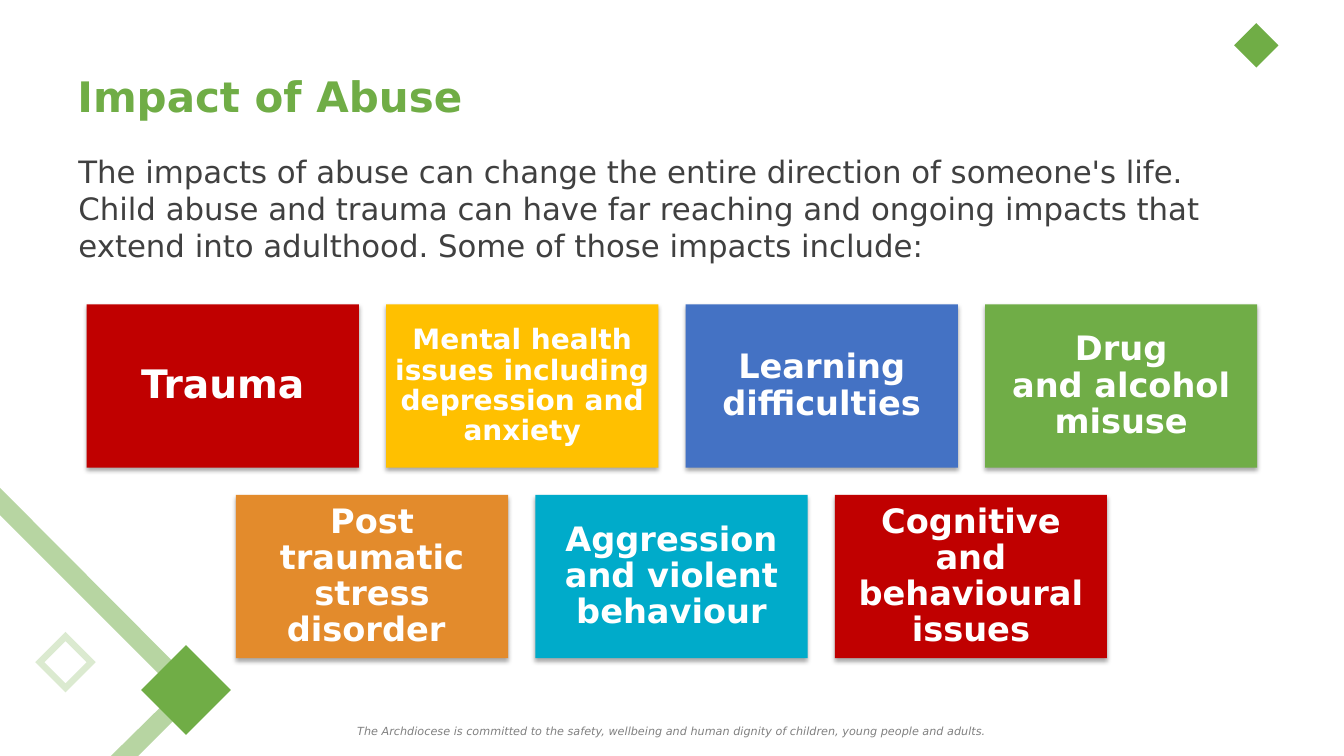
import pptx
import pptx.dml.color
import pptx.enum.shapes
import pptx.enum.text
import pptx.oxml
import pptx.oxml.ns
import pptx.util

EMU_PER_PX = 9144  # 100 px to the inch
PAGE_WIDTH, PAGE_HEIGHT = 1333, 750
COLORS = {
    "leaf": "70AD46", "green": "70AD47", "red": "C00000", "yellow": "FFC000",
    "blue": "4472C4", "orange": "E38B2C", "teal": "00ABCA",
    "text": "404040", "footer": "808080", "white": "FFFFFF",
}
TILE_WIDTH, TILE_HEIGHT, TILE_GAP, TILE_TOP = 270, 162, 27, 302
TILE_ROWS = [
    [("Trauma", "red", 28, 12),
     ("Mental health issues including depression and anxiety", "yellow", 20, 8),
     ("Learning difficulties", "blue", 24, 10),
     ("Drug\nand alcohol misuse", "green", 24, 10)],
    [("Post traumatic stress disorder ", "orange", 24, 10),
     ("Aggression\nand violent behaviour", "teal", 24, 10),
     ("Cognitive\nand behavioural issues", "red", 24, 10)],
]
SHADOW = (
    '<a:effectLst xmlns:a="http://schemas.openxmlformats.org/drawingml/2006/main">'
    '<a:outerShdw blurRad="40000" dist="23000" dir="5400000" rotWithShape="0">'
    '<a:srgbClr val="000000"><a:alpha val="35000"/></a:srgbClr>'
    '</a:outerShdw></a:effectLst>'
)
ALIGN = pptx.enum.text.PP_ALIGN
ANCHOR = pptx.enum.text.MSO_ANCHOR
PRESET = pptx.enum.shapes.MSO_SHAPE


def px(*lengths):
    return [pptx.util.Emu(length * EMU_PER_PX) for length in lengths]


class Slide:
    font = "DejaVu Sans"

    def __init__(self, deck):
        self.shapes = deck.slides.add_slide(deck.slide_layouts[6]).shapes

    def paint(self, shape, color, opacity=100):
        shape.shadow.inherit = False
        shape.line.fill.background()
        shape.fill.solid()
        shape.fill.fore_color.rgb = pptx.dml.color.RGBColor.from_string(COLORS[color])
        if opacity < 100:
            fill = shape._element.spPr.find(pptx.oxml.ns.qn("a:solidFill"))
            alpha = fill[0].makeelement(pptx.oxml.ns.qn("a:alpha"), {"val": str(opacity * 1000)})
            fill[0].append(alpha)

    def set_text(self, shape, lines, size, color, anchor=ANCHOR.TOP, align=ALIGN.LEFT,
                 bold=False, italic=False, spacing=None):
        frame = shape.text_frame
        frame.word_wrap = True
        frame.vertical_anchor = anchor
        for index, line in enumerate(lines):
            para = frame.add_paragraph() if index else frame.paragraphs[0]
            para.text = line
            para.alignment = align
            para.line_spacing = spacing
            font = para.font
            font.name, font.size = self.font, pptx.util.Pt(size)
            font.bold, font.italic = bold, italic
            font.color.rgb = pptx.dml.color.RGBColor.from_string(COLORS[color])

    def text(self, left, top, width, height, lines, size, color, **style):
        box = self.shapes.add_textbox(*px(left, top, width, height))
        self.set_text(box, lines, size, color, **style)

    def diamond(self, left, top, side):
        shape = self.shapes.add_shape(PRESET.DIAMOND, *px(left, top, side, side))
        self.paint(shape, "leaf")

    def outline(self, contours, opacity):
        """Fill the area bounded by closed contours; a reversed one cuts a hole."""
        builder = self.shapes.build_freeform(*contours[0][0], scale=EMU_PER_PX)
        for index, (start, *points) in enumerate(contours):
            if index:
                builder.move_to(*start)
            builder.add_line_segments(points, close=True)
        self.paint(builder.convert_to_shape(), "leaf", opacity)

    def tile(self, left, top, label, color, size, inset):
        shape = self.shapes.add_shape(PRESET.RECTANGLE, *px(left, top, TILE_WIDTH, TILE_HEIGHT))
        self.paint(shape, color)
        properties = shape._element.spPr
        properties.remove(properties.find(pptx.oxml.ns.qn("a:effectLst")))
        properties.append(pptx.oxml.parse_xml(SHADOW))
        frame = shape.text_frame
        frame.margin_left, frame.margin_top, frame.margin_right, frame.margin_bottom = px(*[inset] * 4)
        self.set_text(shape, [label], size, "white", anchor=ANCHOR.MIDDLE, align=ALIGN.CENTER,
                      bold=True, spacing=0.9)


def main():
    deck = pptx.Presentation()
    deck.slide_width, deck.slide_height = px(PAGE_WIDTH, PAGE_HEIGHT)
    slide = Slide(deck)

    slide.text(0, 714, PAGE_WIDTH, 24,
               ["The Archdiocese is committed to the safety, wellbeing and human dignity "
                "of children, young people and adults."],
               8, "footer", align=ALIGN.CENTER, italic=True)
    slide.outline([[(65, 627), (35, 657), (65, 687), (95, 657)],
                   [(65, 636), (86, 657), (65, 678), (44, 657)]], opacity=25)
    slide.diamond(140, 640, 89)
    slide.diamond(1224, 23, 44)
    slide.outline([[(0, 484), (0, 511), (175, 686), (110, 750), (137, 750), (201, 686)]],
                  opacity=50)

    slide.text(67, 44, 1200, 102, ["Impact of Abuse"], 30, "leaf",
               anchor=ANCHOR.MIDDLE, bold=True)
    slide.text(68, 147, 1198, 130,
               ["The impacts of abuse can change the entire direction of someone's life.",
                "Child abuse and trauma can have far reaching and ongoing impacts that "
                "extend into adulthood. Some of those impacts include:"],
               22, "text")

    for row, tiles in enumerate(TILE_ROWS):
        row_width = len(tiles) * (TILE_WIDTH + TILE_GAP) - TILE_GAP
        row_left = (PAGE_WIDTH - row_width) // 2
        for column, tile in enumerate(tiles):
            slide.tile(row_left + column * (TILE_WIDTH + TILE_GAP),
                       TILE_TOP + row * (TILE_HEIGHT + TILE_GAP), *tile)

    deck.save("out.pptx")


if __name__ == "__main__":
    main()
